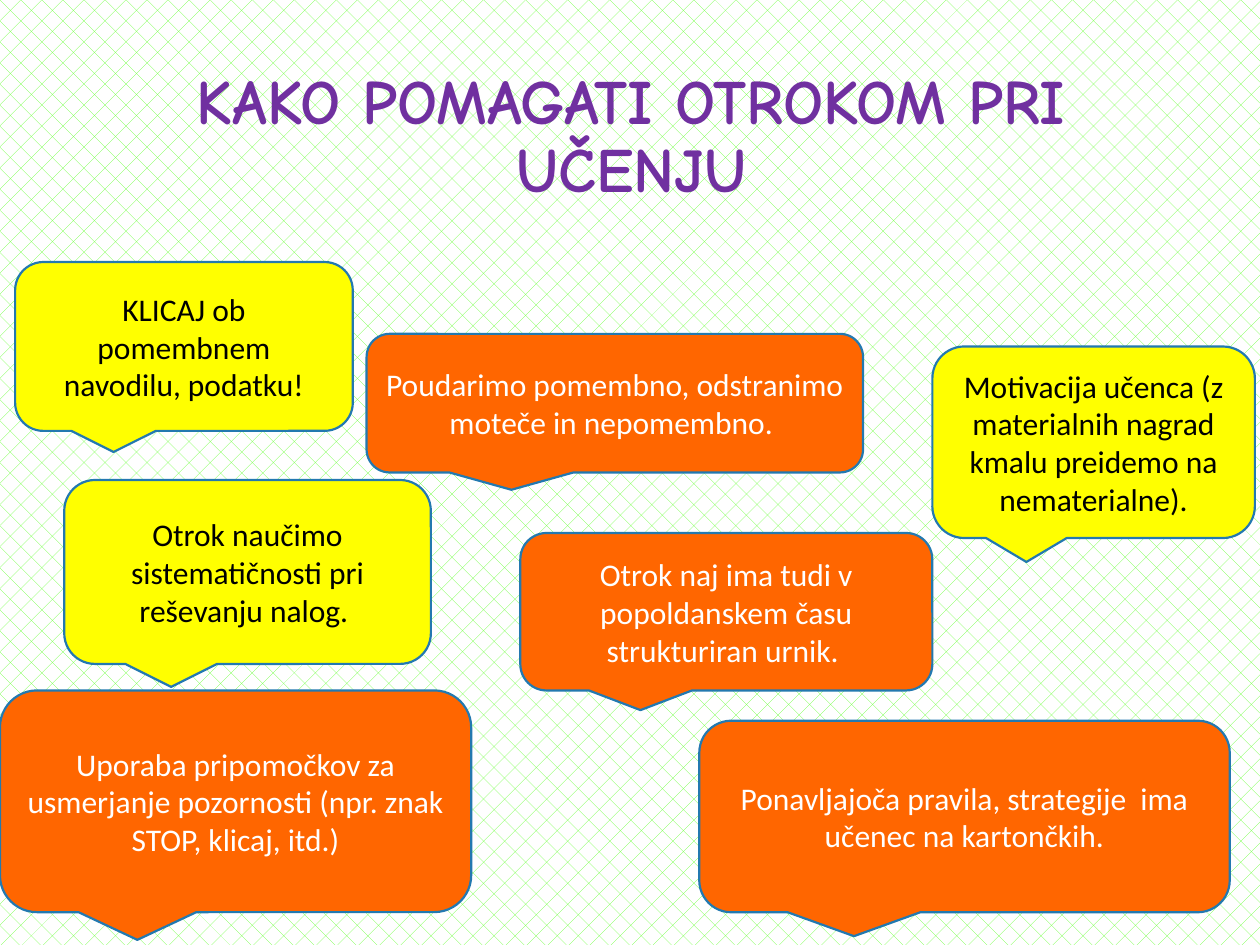
from dataclasses import dataclass

from pptx import Presentation
from pptx.dml.color import RGBColor
from pptx.enum.dml import MSO_PATTERN
from pptx.enum.shapes import MSO_SHAPE as Shape
from pptx.enum.text import MSO_ANCHOR as Anchor, PP_ALIGN as Align
from pptx.util import Inches, Pt

COLUMNS, ROWS = 100, 75


@dataclass(frozen=True)
class Theme:
    paper: str = "FFFFFF"
    lattice: str = "66FF33"
    heading: str = "7030A0"
    outline: str = "2379B0"
    yellow: str = "FFFF00"
    orange: str = "FF6600"
    dark: str = "000000"
    light: str = "FFFFFF"
    heading_font: str = "Comic Neue"
    body_font: str = "Calibri"
    heading_size: int = 36
    body_size: int = 18
    outline_width: float = 1.25


THEME = Theme()
YELLOW = (THEME.yellow, THEME.dark)
ORANGE = (THEME.orange, THEME.light)

TITLE = "KAKO POMAGATI OTROKOM PRI UČENJU"
TITLE_BOX = (5.1, 3.2, 90, 15.6)
TIPS = [
    ("KLICAJ ob pomembnem navodilu, podatku!", (1.2, 20.8, 26.8, 13.4), YELLOW),
    ("Poudarimo pomembno, odstranimo moteče in nepomembno. ", (29.1, 26.5, 39.4, 11), ORANGE),
    ("Otrok naučimo sistematičnosti pri reševanju nalog. ", (5.1, 38.1, 29.1, 14.6), YELLOW),
    ("Uporaba pripomočkov za usmerjanje pozornosti (npr. znak STOP, klicaj, itd.)",
     (0, 54.8, 37.4, 17.6), ORANGE),
    ("Ponavljajoča pravila, strategije  ima učenec na kartončkih.",
     (55.5, 57.2, 42.1, 15.2), ORANGE),
    ("Motivacija učenca (z materialnih nagrad kmalu preidemo na nematerialne).",
     (74, 27.5, 25.6, 15.2), YELLOW),
    ("Otrok naj ima tudi v popoldanskem času strukturiran urnik. ",
     (41.3, 42.3, 32.7, 12.5), ORANGE),
]


def place(deck, box):
    column, row = deck.slide_width / COLUMNS, deck.slide_height / ROWS
    left, top, width, height = box
    return [round(n) for n in (left * column, top * row, width * column, height * row)]


def write(frame, wording, font_name, size, color, bold=False):
    frame.word_wrap = True
    frame.vertical_anchor = Anchor.MIDDLE
    frame.text = wording
    paragraph = frame.paragraphs[0]
    paragraph.alignment = Align.CENTER
    font = paragraph.runs[0].font
    font.name, font.size, font.bold = font_name, Pt(size), bold
    font.color.rgb = RGBColor.from_string(color)
    return paragraph


def paint_background(slide):
    fill = slide.background.fill
    fill.patterned()
    fill.pattern = MSO_PATTERN.DIAGONAL_BRICK
    fill.fore_color.rgb = RGBColor.from_string(THEME.lattice)
    fill.back_color.rgb = RGBColor.from_string(THEME.paper)


def add_title(deck, slide, box):
    heading = slide.shapes.add_textbox(*place(deck, box))
    paragraph = write(heading.text_frame, TITLE, THEME.heading_font,
                      THEME.heading_size, THEME.heading, bold=True)
    paragraph.line_spacing = 0.9


def add_tip(deck, slide, wording, box, colors):
    fill_color, text_color = colors
    bubble = slide.shapes.add_shape(Shape.ROUNDED_RECTANGULAR_CALLOUT, *place(deck, box))
    bubble.shadow.inherit = False
    bubble.fill.solid()
    bubble.fill.fore_color.rgb = RGBColor.from_string(fill_color)
    bubble.line.color.rgb = RGBColor.from_string(THEME.outline)
    bubble.line.width = Pt(THEME.outline_width)
    write(bubble.text_frame, wording, THEME.body_font, THEME.body_size, text_color)


def main():
    deck = Presentation()
    deck.slide_width, deck.slide_height = Inches(10), Inches(7.5)
    slide = deck.slides.add_slide(deck.slide_layouts[6])
    paint_background(slide)
    add_title(deck, slide, TITLE_BOX)
    for wording, box, colors in TIPS:
        add_tip(deck, slide, wording, box, colors)
    deck.save("out.pptx")


if __name__ == "__main__":
    main()
